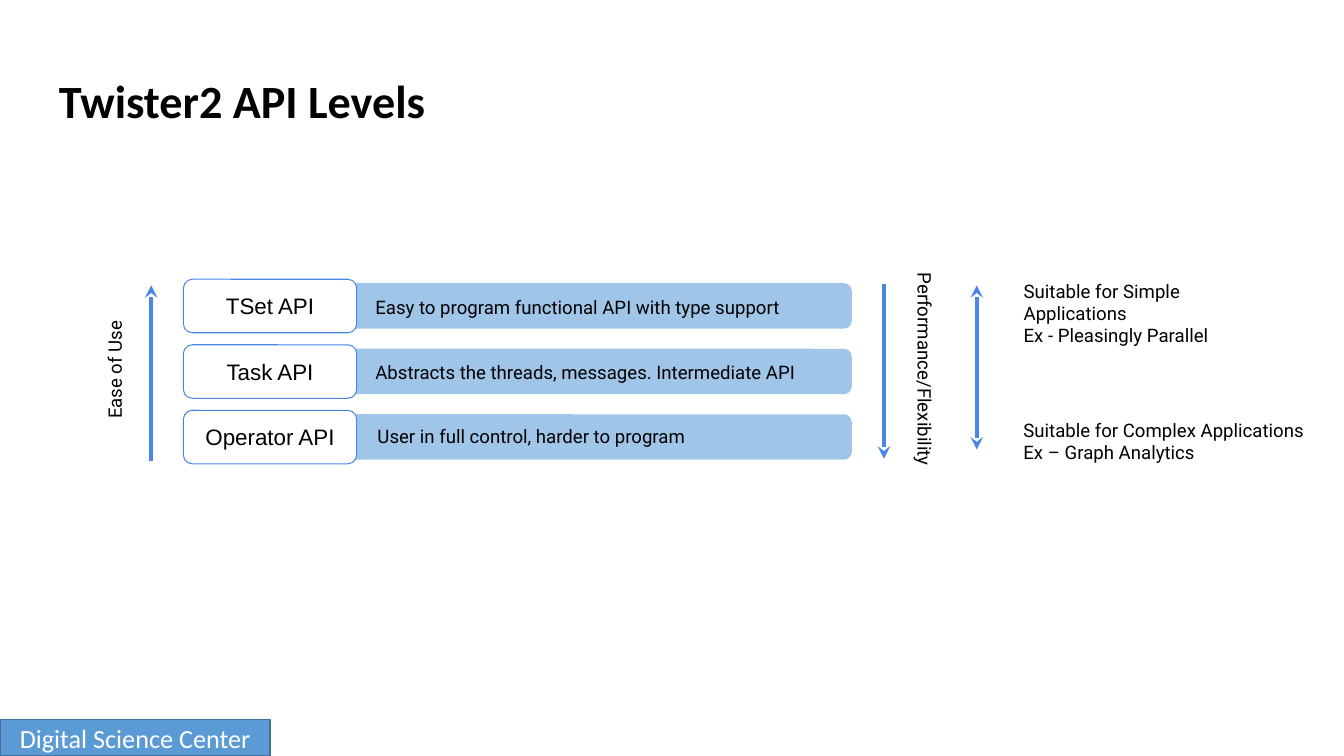
from lxml.etree import SubElement
from pptx import Presentation
from pptx.dml.color import RGBColor
from pptx.enum.shapes import MSO_CONNECTOR as Connector, MSO_SHAPE as Shape
from pptx.enum.text import MSO_ANCHOR as Anchor, MSO_AUTO_SIZE as AutoSize, PP_ALIGN as Align
from pptx.oxml.ns import qn
from pptx.util import Pt

BLACK, WHITE = "000000", "FFFFFF"
ACCENT, BAR = "4A86E8", "9FC5E8"
INSET = 9.6
LEVEL_TOP, LEVEL_PITCH = 199.5, 46.8
LEVELS = [
    ("TSet API", "Easy to program functional API with type support", 258.5, 201.6),
    ("Task API", "Abstracts the threads, messages. Intermediate API", 258.5, 248.4),
    ("Operator API", "User in full control, harder to program", 260, 293.8),
]


def paint(color_format, color):
    color_format.rgb = RGBColor.from_string(color)


def write(frame, lines, font, size, color=BLACK, align=Align.LEFT,
          anchor=Anchor.TOP, inset=INSET, bold=False):
    frame.word_wrap = True
    frame.auto_size = AutoSize.NONE
    frame.vertical_anchor = anchor
    frame.margin_left = frame.margin_right = Pt(inset)
    frame.margin_top = frame.margin_bottom = Pt(inset)
    frame.text = "\n".join(lines)
    for paragraph in frame.paragraphs:
        paragraph.alignment = align
        paragraph.font.name = font
        paragraph.font.size = Pt(size)
        paragraph.font.bold = bold
        paint(paragraph.font.color, color)


def add_box(slide, kind, left, top, width, height, fill, border=None, weight=0.75):
    box = slide.shapes.add_shape(kind, Pt(left), Pt(top), Pt(width), Pt(height))
    box.shadow.inherit = False
    box.fill.solid()
    paint(box.fill.fore_color, fill)
    if border:
        paint(box.line.color, border)
        box.line.width = Pt(weight)
    else:
        box.line.fill.background()
    return box


def add_note(slide, lines, left, top, width, rotation=0):
    note = slide.shapes.add_textbox(Pt(left), Pt(top), Pt(width), Pt(20.2))
    note.rotation = rotation
    write(note.text_frame, lines, "Roboto", 13.3)


def add_arrow(slide, x, start, end, ends=("tailEnd",)):
    arrow = slide.shapes.add_connector(Connector.STRAIGHT, Pt(x), Pt(start), Pt(x), Pt(end))
    paint(arrow.line.color, ACCENT)
    arrow.line.width = Pt(3)
    outline = arrow.line._get_or_add_ln()
    for tip in ends:
        SubElement(outline, qn(f"a:{tip}"), type="stealth")
    SubElement(arrow._element.spPr, qn("a:effectLst"))


def add_title(slide, text):
    title = slide.shapes.title
    title.left, title.top, title.width, title.height = Pt(32.4), Pt(46.8), Pt(894.2), Pt(60.5)
    write(title.text_frame, [text], "Calibri", 33, bold=True)
    title.text_frame.paragraphs[0].line_spacing = 0.9


def add_levels(slide):
    for row, (name, summary, left, top) in enumerate(LEVELS):
        level_top = LEVEL_TOP + row * LEVEL_PITCH
        add_box(slide, Shape.ROUNDED_RECTANGLE, 247.7, level_top + 2.8, 360.7, 32.4, BAR)
        label = add_box(slide, Shape.ROUNDED_RECTANGLE, 131, level_top, 123.8, 38.2, WHITE, ACCENT)
        write(label.text_frame, [name], "Arial", 16, align=Align.CENTER, anchor=Anchor.MIDDLE)
        add_note(slide, [summary], left, top, 339.1)


def add_footer(slide, text):
    footer = add_box(slide, Shape.RECTANGLE, 0, 514.1, 193, 25.9, "5B9BD5", "42719B", 1)
    write(footer.text_frame, [text], "Calibri", 18.7, WHITE, Align.CENTER, Anchor.MIDDLE, 3.6)
    footer.text_frame.margin_left = footer.text_frame.margin_right = Pt(7.2)


def main():
    deck = Presentation()
    deck.slide_width, deck.slide_height = Pt(960), Pt(540)
    slide = deck.slides.add_slide(deck.slide_layouts[5])

    add_footer(slide, "Digital Science Center")
    add_title(slide, "Twister2 API Levels")
    add_levels(slide)

    add_arrow(slide, 108, 329, 203.8)
    add_note(slide, ["Ease of Use"], 21.6, 246.2, 105.1, 270)
    add_arrow(slide, 631.4, 203, 327.6)
    add_note(slide, ["Performance/Flexibility"], 580.3, 262.8, 175.7, 90)
    add_arrow(slide, 697.7, 203.8, 321.1, ("headEnd", "tailEnd"))
    add_note(slide, ["Suitable for Simple Applications", "Ex - Pleasingly Parallel"],
             721.6, 190.1, 206.6)
    add_note(slide, ["Suitable for Complex Applications", "Ex – Graph Analytics"],
             721.4, 289.4, 223.9)

    deck.save("out.pptx")


if __name__ == "__main__":
    main()
